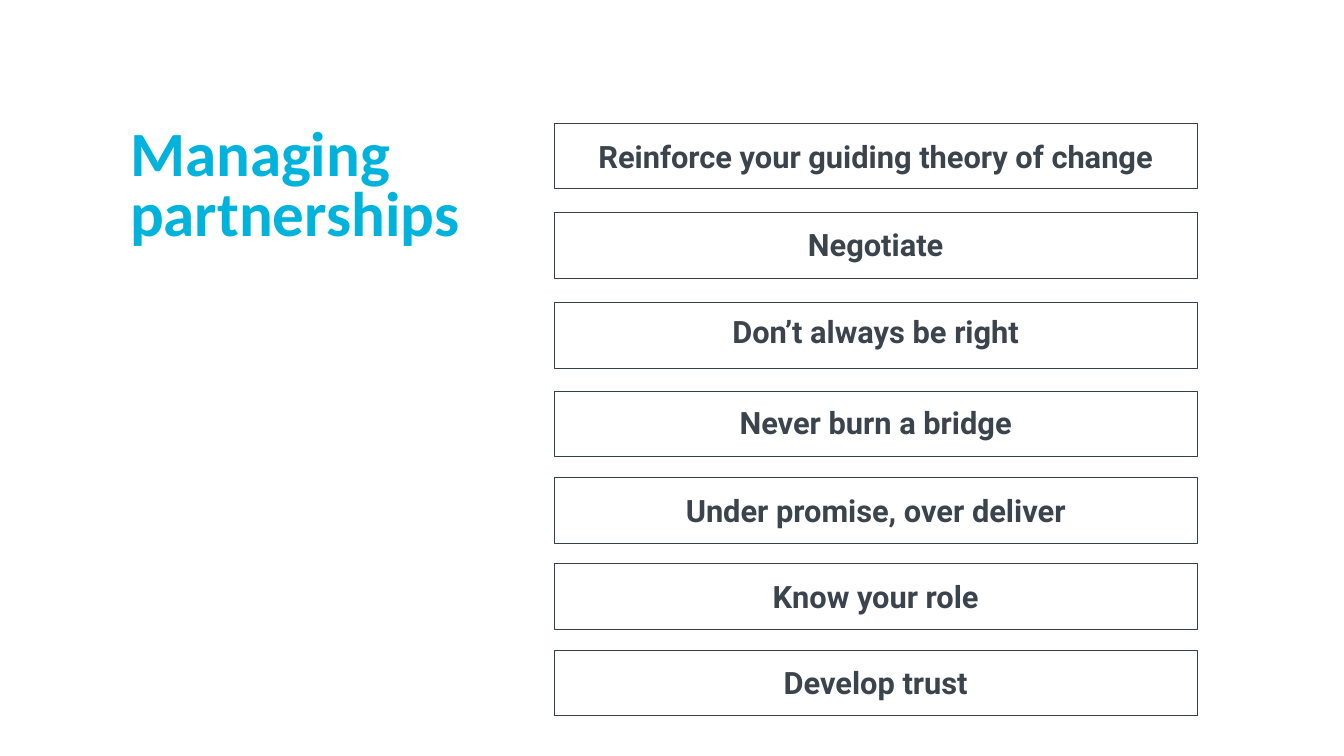
from pptx import Presentation
from pptx.dml.color import RGBColor as RGB
from pptx.enum.shapes import MSO_SHAPE as Shape
from pptx.enum.text import MSO_ANCHOR as Anchor, MSO_AUTO_SIZE as Fit, PP_ALIGN as Align
from pptx.util import Inches, Pt

TITLE = "Managing partnerships"
# advice, top of its box, top of its label
ROWS = [
    ("Reinforce your guiding theory of change", 1.22, 1.32),
    ("Negotiate", 2.11, 2.19),
    ("Don’t always be right", 3.00, 3.05),
    ("Never burn a bridge", 3.88, 3.96),
    ("Under promise, over deliver", 4.74, 4.83),
    ("Know your role", 5.59, 5.68),
    ("Develop trust", 6.45, 6.54),
]
BOX = {"left": 5.5, "width": 6.38, "height": 0.65}
LABEL = {"left": 5.77, "width": 5.83, "height": 0.47}
HEAD = {"left": 1.19, "top": 1.22, "width": 4.59, "height": 1.92}

THEME = {
    "line": RGB.from_string("344047"),
    "rule": Pt(0.5),
    "title": {"name": "Calibri", "size": Pt(45), "bold": True,
              "color": RGB.from_string("00B3DC")},
    "label": {"name": "Roboto", "size": Pt(22), "bold": True,
              "color": RGB.from_string("3B444D")},
}


def inches(place):
    return {key: Inches(val) for key, val in place.items()}


def write(shape, text, style, align, space=None):
    frame = shape.text_frame
    frame.text = text
    frame.word_wrap = True
    frame.auto_size = Fit.NONE
    frame.vertical_anchor = Anchor.TOP
    para = frame.paragraphs[0]
    para.alignment = align
    para.space_before = Pt(0)
    if space:
        para.line_spacing = space
    for key, val in THEME[style].items():
        if key == "color":
            para.font.color.rgb = val
        else:
            setattr(para.font, key, val)


def add_box(slide, top):
    box = slide.shapes.add_shape(Shape.RECTANGLE, **inches({**BOX, "top": top}))
    box.shadow.inherit = False
    box.fill.background()
    box.line.color.rgb = THEME["line"]
    box.line.width = THEME["rule"]


def main():
    deck = Presentation()
    deck.slide_width, deck.slide_height = Inches(13.33), Inches(7.5)
    slide = deck.slides.add_slide(deck.slide_layouts[5])

    title = slide.shapes.title
    for key, val in inches(HEAD).items():
        setattr(title, key, val)
    write(title, TITLE, "title", Align.LEFT, 0.8)

    for _, top, _ in ROWS:
        add_box(slide, top)
    for text, _, top in ROWS:
        label = slide.shapes.add_textbox(**inches({**LABEL, "top": top}))
        write(label, text, "label", Align.CENTER)

    deck.save("out.pptx")


if __name__ == "__main__":
    main()
